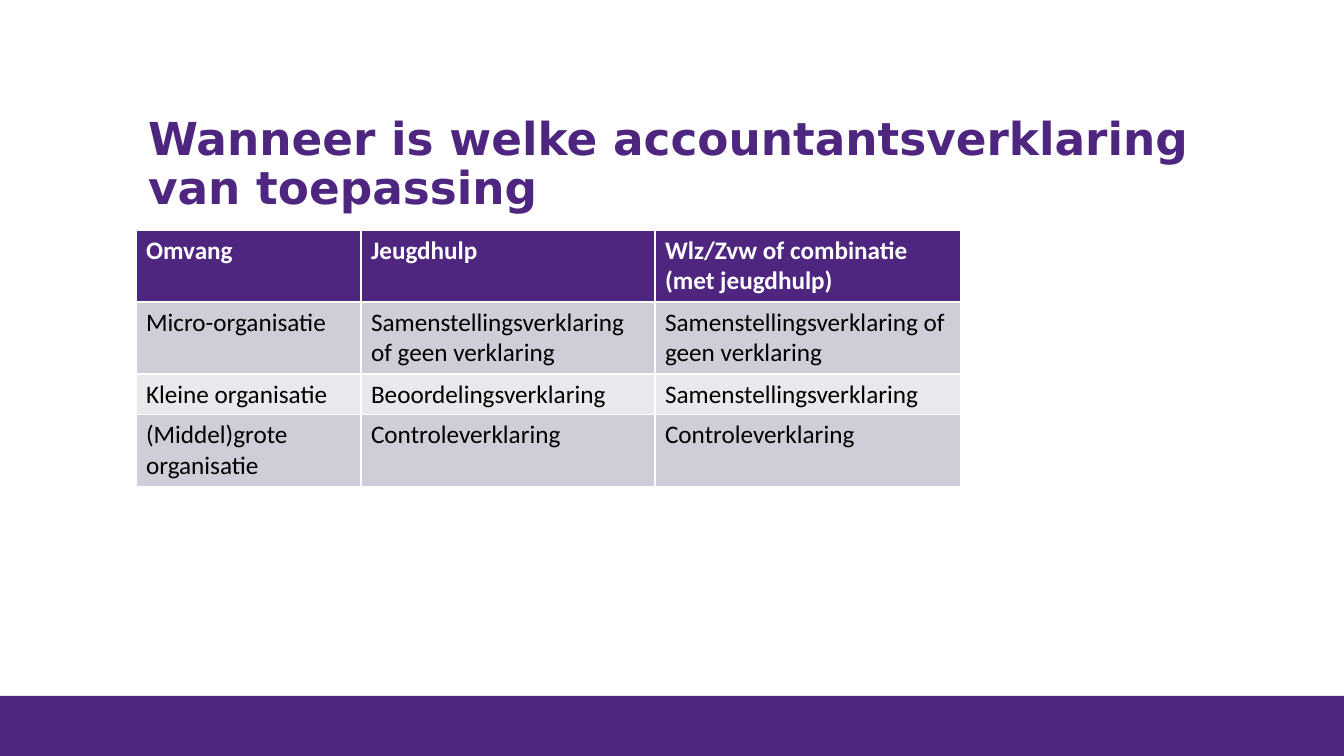
from pptx import Presentation
from pptx.dml.color import RGBColor
from pptx.enum.shapes import MSO_SHAPE
from pptx.enum.text import MSO_ANCHOR, MSO_AUTO_SIZE, PP_ALIGN
from pptx.util import Pt

RECTANGLE = MSO_SHAPE.RECTANGLE
TOP = MSO_ANCHOR.TOP
NO_AUTOFIT = MSO_AUTO_SIZE.NONE
LEFT = PP_ALIGN.LEFT
EMU_PER_PX = 914400 / 100.8
COLORS = {
    "purple": "4E2680",
    "white": "FFFFFF",
    "black": "000000",
    "dark_band": "D0CDD8",
    "light_band": "E9E8ED",
}


def px(length):
    return round(length * EMU_PER_PX)


def style_font(font, name, size, color, bold):
    font.name = name
    font.size = Pt(size)
    font.bold = bold
    font.color.rgb = RGBColor.from_string(COLORS[color])


prs = Presentation()
prs.slide_width, prs.slide_height = px(1344), px(756)
slide = prs.slides.add_slide(prs.slide_layouts[5])

footer_band = slide.shapes.add_shape(RECTANGLE, 0, px(696), px(1344), px(60))
footer_band.shadow.inherit = False
footer_band.fill.solid()
footer_band.fill.fore_color.rgb = RGBColor.from_string(COLORS["purple"])
footer_band.line.fill.background()

title = slide.shapes.title
title.left, title.top, title.width, title.height = px(138), px(111), px(1159), px(71)
title.text_frame.text = "Wanneer is welke accountantsverklaring van toepassing"
title.text_frame.word_wrap = True
title.text_frame.auto_size = NO_AUTOFIT
title.text_frame.vertical_anchor = TOP
heading = title.text_frame.paragraphs[0]
heading.alignment = LEFT
heading.line_spacing = 0.9
style_font(heading.font, "DejaVu Sans", 32.4, "purple", True)

statements = [
    ["Omvang", "Jeugdhulp", "Wlz/Zvw of combinatie (met jeugdhulp)"],
    [
        "Micro-organisatie",
        "Samenstellingsverklaring of geen verklaring",
        "Samenstellingsverklaring of geen verklaring",
    ],
    ["Kleine organisatie", "Beoordelingsverklaring", "Samenstellingsverklaring"],
    ["(Middel)grote organisatie", "Controleverklaring", "Controleverklaring"],
]
column_widths = [225, 294, 306]
row_heights = [72, 72, 40, 72]
row_fills = ["purple", "dark_band", "light_band", "dark_band"]

overview = slide.shapes.add_table(
    len(statements), len(column_widths),
    px(136), px(230), px(sum(column_widths)), px(sum(row_heights)),
).table
for column, width in zip(overview.columns, column_widths):
    column.width = px(width)
for row, height, fill, texts in zip(overview.rows, row_heights, row_fills, statements):
    row.height = px(height)
    is_header = fill == "purple"
    for cell, text in zip(row.cells, texts):
        cell.text = text
        cell.fill.solid()
        cell.fill.fore_color.rgb = RGBColor.from_string(COLORS[fill])
        style_font(
            cell.text_frame.paragraphs[0].font, "Calibri", 18,
            "white" if is_header else "black", is_header,
        )

prs.save("out.pptx")
